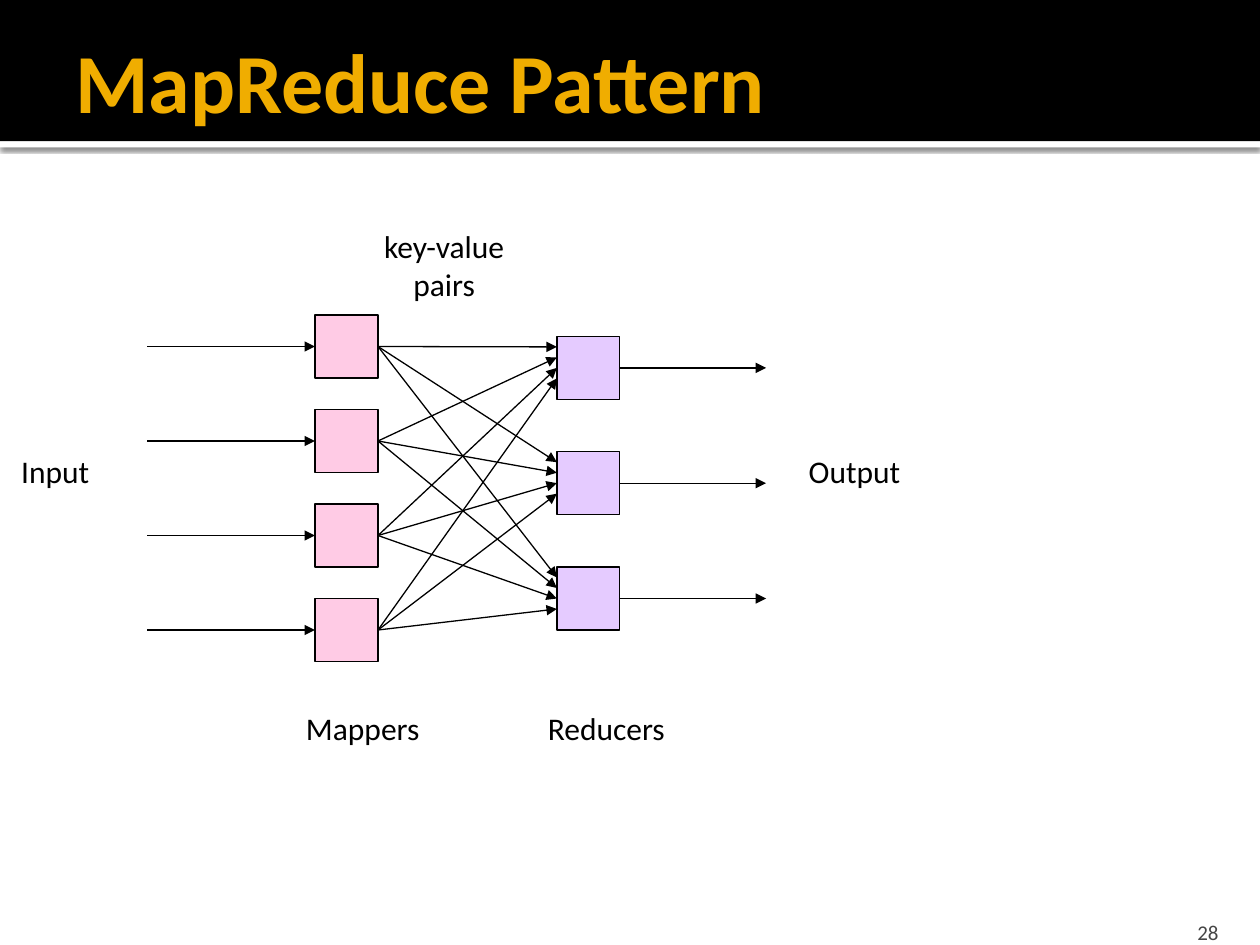
from lxml import etree
from pptx import Presentation
from pptx.dml.color import RGBColor
from pptx.enum.shapes import MSO_CONNECTOR, MSO_SHAPE
from pptx.enum.text import MSO_ANCHOR, PP_ALIGN
from pptx.oxml.ns import qn
from pptx.util import Inches, Pt

RECTANGLE = MSO_SHAPE.RECTANGLE
STRAIGHT = MSO_CONNECTOR.STRAIGHT
LEFT, CENTER, RIGHT = PP_ALIGN.LEFT, PP_ALIGN.CENTER, PP_ALIGN.RIGHT
TOP, MIDDLE, BOTTOM = MSO_ANCHOR.TOP, MSO_ANCHOR.MIDDLE, MSO_ANCHOR.BOTTOM
LEFT_SIDE, RIGHT_SIDE = 1, 3

FONT = "Calibri"
COLORS = {
    "black": "000000",
    "white": "FFFFFF",
    "title": "F0AD00",
    "number": "454545",
    "mapper": "FF99CC",
    "reducer": "CC99FF",
}

TITLE = "MapReduce Pattern"
PAGE_NUMBER = "28"
LABELS = [
    ("Mappers", 2.33, 5.58, 1.11, 0.4, LEFT),
    ("Reducers", 4.25, 5.58, 1.16, 0.4, LEFT),
    ("Input", 0.07, 3.54, 0.75, 0.4, LEFT),
    ("Output", 6.32, 3.54, 0.96, 0.4, LEFT),
    ("key-value\npairs", 2.92, 1.75, 1.21, 0.71, CENTER),
]

BOX_SIZE = 0.5
MAPPERS = {"count": 4, "left": 2.5, "top": 2.5, "pitch": 0.75}
REDUCERS = {"count": 3, "left": 4.42, "top": 2.67, "pitch": 0.915}
INPUT_LEFT, OUTPUT_RIGHT = 1.17, 6.08
ENTRY_STEP = BOX_SIZE / 6
MIDDLE_ENTRY = 2


def color(name):
    return RGBColor.from_string(COLORS[name])


def add_rectangle(slide, left, top, width, height, fill):
    shape = slide.shapes.add_shape(
        RECTANGLE, Inches(left), Inches(top), Inches(width), Inches(height))
    shape.shadow.inherit = False
    shape.fill.solid()
    shape.fill.fore_color.rgb = color(fill)
    shape.line.fill.background()
    return shape


def add_band_shadow(shape):
    effects = shape._element.spPr.find(qn("a:effectLst"))
    shadow = etree.SubElement(
        effects, qn("a:outerShdw"), blurRad=str(Pt(2.5)), dist=str(Pt(0.8)),
        dir="5400000", algn="t", rotWithShape="0")
    shade = etree.SubElement(shadow, qn("a:srgbClr"), val=COLORS["black"])
    etree.SubElement(shade, qn("a:alpha"), val="60000")


def add_box_column(slide, column, fill):
    boxes = []
    for row in range(column["count"]):
        top = column["top"] + row * column["pitch"]
        box = add_rectangle(slide, column["left"], top, BOX_SIZE, BOX_SIZE, fill)
        box.line.color.rgb = color("black")
        box.line.width = Pt(0.75)
        tint = box.fill._xPr.find(qn("a:solidFill"))[0]
        etree.SubElement(tint, qn("a:alpha"), val="50000")
        boxes.append(box)
    return boxes


def add_arrow(slide, start_x, start_y, end_x, end_y, source=None, target=None):
    arrow = slide.shapes.add_connector(STRAIGHT, start_x, start_y, end_x, end_y)
    if source is not None:
        arrow.begin_connect(source, RIGHT_SIDE)
    if target is not None:
        arrow.end_connect(target, LEFT_SIDE)
    arrow.line.color.rgb = color("black")
    arrow.line.width = Pt(0.75)
    etree.SubElement(arrow.line._get_or_add_ln(), qn("a:tailEnd"), type="triangle")
    etree.SubElement(arrow._element.spPr, qn("a:effectLst"))


def add_text(slide, text, left, top, width, height, align=LEFT, size=18,
             fill="black", bold=False, anchor=TOP, wrap=False,
             right_inset=0.1, bottom_inset=0.05):
    box = slide.shapes.add_textbox(
        Inches(left), Inches(top), Inches(width), Inches(height))
    frame = box.text_frame
    frame.text = text
    frame.word_wrap = wrap
    frame.vertical_anchor = anchor
    frame.margin_right = Inches(right_inset)
    frame.margin_bottom = Inches(bottom_inset)
    for paragraph in frame.paragraphs:
        paragraph.alignment = align
        for run in paragraph.runs:
            run.font.name = FONT
            run.font.size = Pt(size)
            run.font.bold = bold
            run.font.color.rgb = color(fill)


def main():
    presentation = Presentation()
    presentation.slide_width = Inches(10)
    presentation.slide_height = Inches(7.5)
    slide = presentation.slides.add_slide(presentation.slide_layouts[6])

    add_band_shadow(add_rectangle(slide, 0, 1.12, 10, 0.05, "white"))
    add_rectangle(slide, 0, 0, 10, 1.12, "black")
    add_text(slide, PAGE_NUMBER, 8.97, 7.2, 0.8, 0.3, RIGHT, 12, "number",
             anchor=BOTTOM, wrap=True, bottom_inset=0)
    add_text(slide, TITLE, 0.5, 0.17, 9.5, 0.92, LEFT, 48, "title", bold=True,
             anchor=MIDDLE, wrap=True, right_inset=0.05)

    mappers = add_box_column(slide, MAPPERS, "mapper")
    reducers = add_box_column(slide, REDUCERS, "reducer")

    for entry, mapper in enumerate(mappers):
        mapper_y = mapper.top + mapper.height // 2
        mapper_right = mapper.left + mapper.width
        add_arrow(slide, Inches(INPUT_LEFT), mapper_y, mapper.left, mapper_y,
                  target=mapper)
        for reducer in reducers:
            entry_y = reducer.top + Inches(ENTRY_STEP * (entry + 1))
            joined = reducer if entry == MIDDLE_ENTRY else None
            add_arrow(slide, mapper_right, mapper_y, reducer.left, entry_y,
                      source=mapper, target=joined)

    for reducer in reducers:
        reducer_y = reducer.top + reducer.height // 2
        add_arrow(slide, reducer.left + reducer.width, reducer_y,
                  Inches(OUTPUT_RIGHT), reducer_y, source=reducer)

    for label in LABELS:
        add_text(slide, *label)

    presentation.save("out.pptx")


if __name__ == "__main__":
    main()
